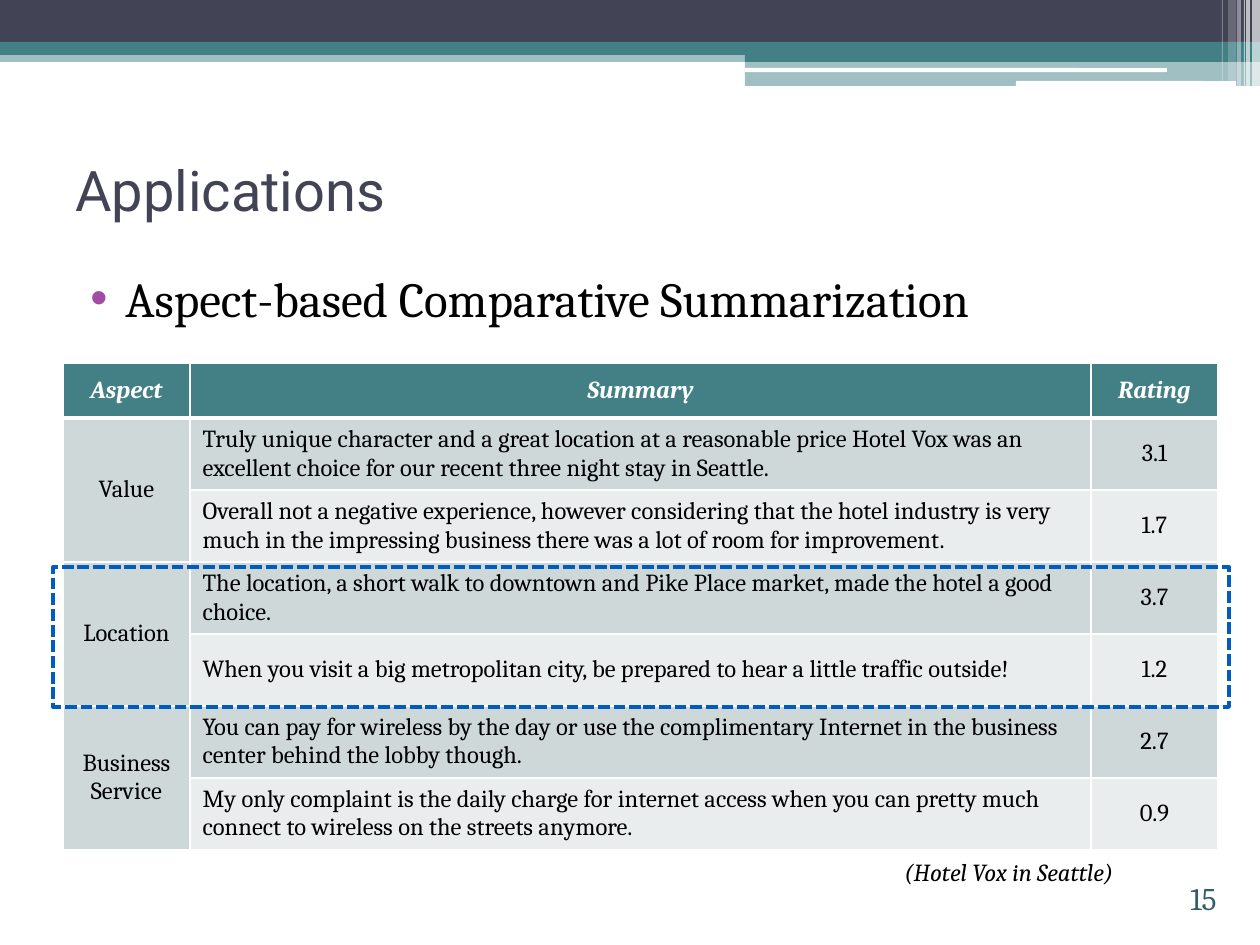
from lxml.etree import SubElement
from pptx import Presentation
from pptx.dml.color import RGBColor
from pptx.enum.dml import MSO_LINE
from pptx.enum.shapes import MSO_SHAPE
from pptx.enum.text import MSO_ANCHOR, PP_ALIGN
from pptx.oxml.ns import qn
from pptx.util import Emu, Pt

PX_PER_INCH = 126
NAVY, TEAL, WHITE, BLACK = "424456", "438086", "FFFFFF", "000000"
DARK_BAND, LIGHT_BAND = "CFD8D9", "E9EDED"

HEADINGS = ["Aspect", "Summary", "Rating"]
ASPECTS = [
    ("Value", [
        ("Truly unique character and a great location at a reasonable price Hotel Vox was an "
         "excellent choice for our recent three night stay in Seattle.", "3.1"),
        ("Overall not a negative experience, however considering that the hotel industry is very "
         "much in the impressing business there was a lot of room for improvement.", "1.7"),
    ]),
    ("Location", [
        ("The location, a short walk to downtown and Pike Place market, made the hotel a good "
         "choice.", "3.7"),
        ("When you visit a big metropolitan city, be prepared to hear a little traffic outside!",
         "1.2"),
    ]),
    ("Business Service", [
        ("You can pay for wireless by the day or use the complimentary Internet in the business "
         "center behind the lobby though.", "2.7"),
        ("My only complaint is the daily charge for internet access when you can pretty much "
         "connect to wireless on the streets anymore.", "0.9"),
    ]),
]


def px(length):
    return Emu(round(length * 914400 / PX_PER_INCH))


def color(hex_code):
    return RGBColor.from_string(hex_code)


def add_block(page, box, fill, opacity=100, kind=MSO_SHAPE.RECTANGLE):
    block = page.shapes.add_shape(kind, *map(px, box))
    block.shadow.inherit = False
    block.line.fill.background()
    block.fill.solid()
    block.fill.fore_color.rgb = color(fill)
    if opacity < 100:
        tint = block.fill._xPr.find(qn("a:solidFill"))[0]
        SubElement(tint, qn("a:alpha"), val=str(opacity * 1000))


def write(frame, text, size, ink, font="Cambria", align=PP_ALIGN.LEFT,
          anchor=MSO_ANCHOR.TOP, bold=False, italic=False):
    frame.word_wrap = True
    frame.vertical_anchor = anchor
    para = frame.paragraphs[0]
    para.alignment = align
    span = para.add_run()
    span.text = text
    span.font.name, span.font.size = font, Pt(size)
    span.font.bold, span.font.italic = bold, italic
    span.font.color.rgb = color(ink)
    return para


def add_text(page, box, *args, **style):
    frame = page.shapes.add_textbox(*map(px, box)).text_frame
    return write(frame, *args, **style)


def add_banner(page, box):
    left, top, width, height = box

    # Full-width bands
    for offset, depth, fill, opacity in [(50, 12, TEAL, 50), (0, 42, NAVY, 100),
                                         (42, 13, TEAL, 100)]:
        add_block(page, (left, top + offset, width, depth), fill, opacity)

    # Stepped bands on the right, with white cut-outs
    step = 745
    add_block(page, (left + step, top + 49, width - step, 13), TEAL)
    add_block(page, (left + step, top + 61, width - step, 25), TEAL, 50)
    for offset, drop, length, depth in [(step, 68, 422, 4), (1016, 81, 220, 5)]:
        add_block(page, (left + offset, top + drop, length, depth), WHITE,
                  kind=MSO_SHAPE.ROUNDED_RECTANGLE)

    # Translucent stripes at the right edge
    for offset, thickness, depth, opacity in [
            (1252, 8, height, 65), (1246, 4, height, 65), (1244, 1, height, 60),
            (1237, 4, height, 40), (1228, 8, 81, 20), (1222, 1, 81, 30)]:
        add_block(page, (left + offset, top, thickness, depth), WHITE, opacity)


def add_bullet_point(page, box, text):
    para = add_text(page, box, text, 28, BLACK)
    para.space_before = Pt(3)
    properties = para._p.get_or_add_pPr()
    properties.set("marL", str(px(50)))
    properties.set("indent", str(-px(35)))
    bullet_color = SubElement(properties, qn("a:buClr"))
    SubElement(bullet_color, qn("a:srgbClr"), val="A04DA3")
    SubElement(properties, qn("a:buFont"), typeface="Arial")
    SubElement(properties, qn("a:buChar"), char="•")


def fill_cell(cell, text, fill, ink=BLACK, align=PP_ALIGN.CENTER, heading=False):
    if text:
        write(cell.text_frame, text, 14, ink, align=align, bold=heading, italic=heading)
    cell.vertical_anchor = MSO_ANCHOR.MIDDLE
    properties = cell._tc.get_or_add_tcPr()
    for side in ("lnL", "lnR", "lnT", "lnB"):
        weight = 3 if heading and side == "lnB" else 1
        border = SubElement(properties, qn(f"a:{side}"), w=str(Pt(weight)))
        paint = SubElement(border, qn("a:solidFill"))
        SubElement(paint, qn("a:srgbClr"), val=WHITE)
    cell.fill.solid()
    cell.fill.fore_color.rgb = color(fill)


def add_ratings_table(page, box):
    row_count = 1 + sum(len(reviews) for _, reviews in ASPECTS)
    table = page.shapes.add_table(row_count, len(HEADINGS), *map(px, box)).table
    side, heading_height = 127, 55
    for column, width in zip(table.columns, (side, box[2] - 2 * side, side)):
        column.width = px(width)
    for index, row in enumerate(table.rows):
        body_height = (box[3] - heading_height) / (row_count - 1)
        row.height = px(body_height if index else heading_height)

    for column, heading in enumerate(HEADINGS):
        fill_cell(table.cell(0, column), heading, TEAL, WHITE, heading=True)

    # Each aspect spans its reviews
    row = 1
    for aspect, reviews in ASPECTS:
        first = row
        for (summary, rating), band in zip(reviews, (DARK_BAND, LIGHT_BAND)):
            fill_cell(table.cell(row, 0), aspect if row == first else "", DARK_BAND)
            fill_cell(table.cell(row, 1), summary, band, align=PP_ALIGN.LEFT)
            fill_cell(table.cell(row, 2), rating, band)
            row += 1
        table.cell(first, 0).merge(table.cell(row - 1, 0))


def add_highlight(page, box):
    frame = page.shapes.add_shape(MSO_SHAPE.RECTANGLE, *map(px, box))
    frame.shadow.inherit = False
    frame.fill.background()
    frame.line.color.rgb = color("005CC0")
    frame.line.width = Pt(2.25)
    frame.line.dash_style = MSO_LINE.SQUARE_DOT


def main():
    deck = Presentation()
    deck.slide_width, deck.slide_height = px(1260), px(945)
    page = deck.slides.add_slide(deck.slide_layouts[6])

    add_banner(page, (0, 0, 1260, 86))
    add_text(page, (63, 116, 1134, 147), "Applications", 32, NAVY, font="Roboto",
             anchor=MSO_ANCHOR.MIDDLE)
    add_bullet_point(page, (63, 262, 1134, 651), "Aspect-based Comparative Summarization")
    add_text(page, (1124, 873, 105, 50), "15", 18, "326065", align=PP_ALIGN.RIGHT,
             anchor=MSO_ANCHOR.BOTTOM)
    add_ratings_table(page, (63, 363, 1155, 487))
    add_highlight(page, (53, 567, 1176, 140))
    add_text(page, (892, 851, 284, 43), "(Hotel Vox in Seattle)", 14, BLACK, italic=True)

    deck.save("out.pptx")


if __name__ == "__main__":
    main()
